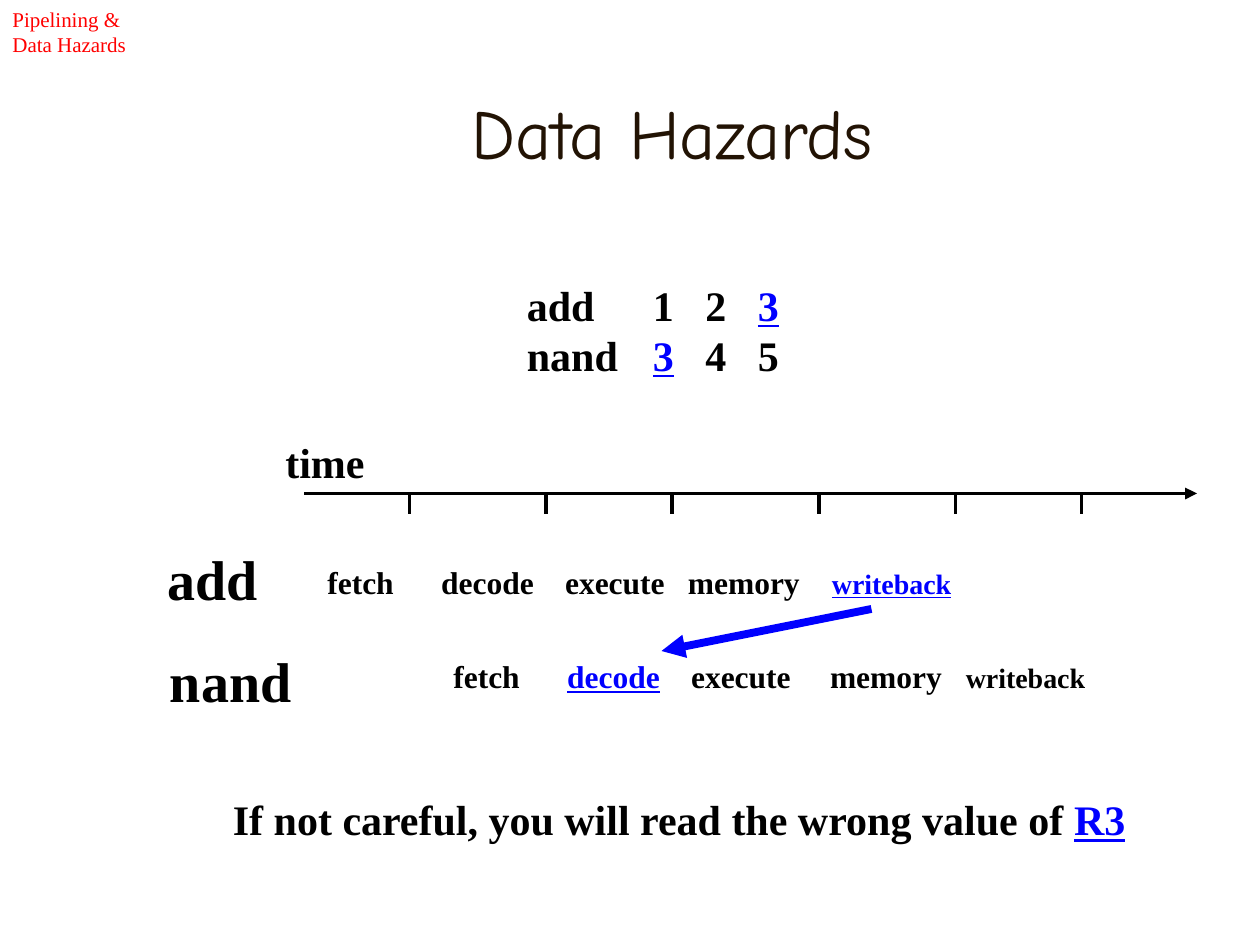
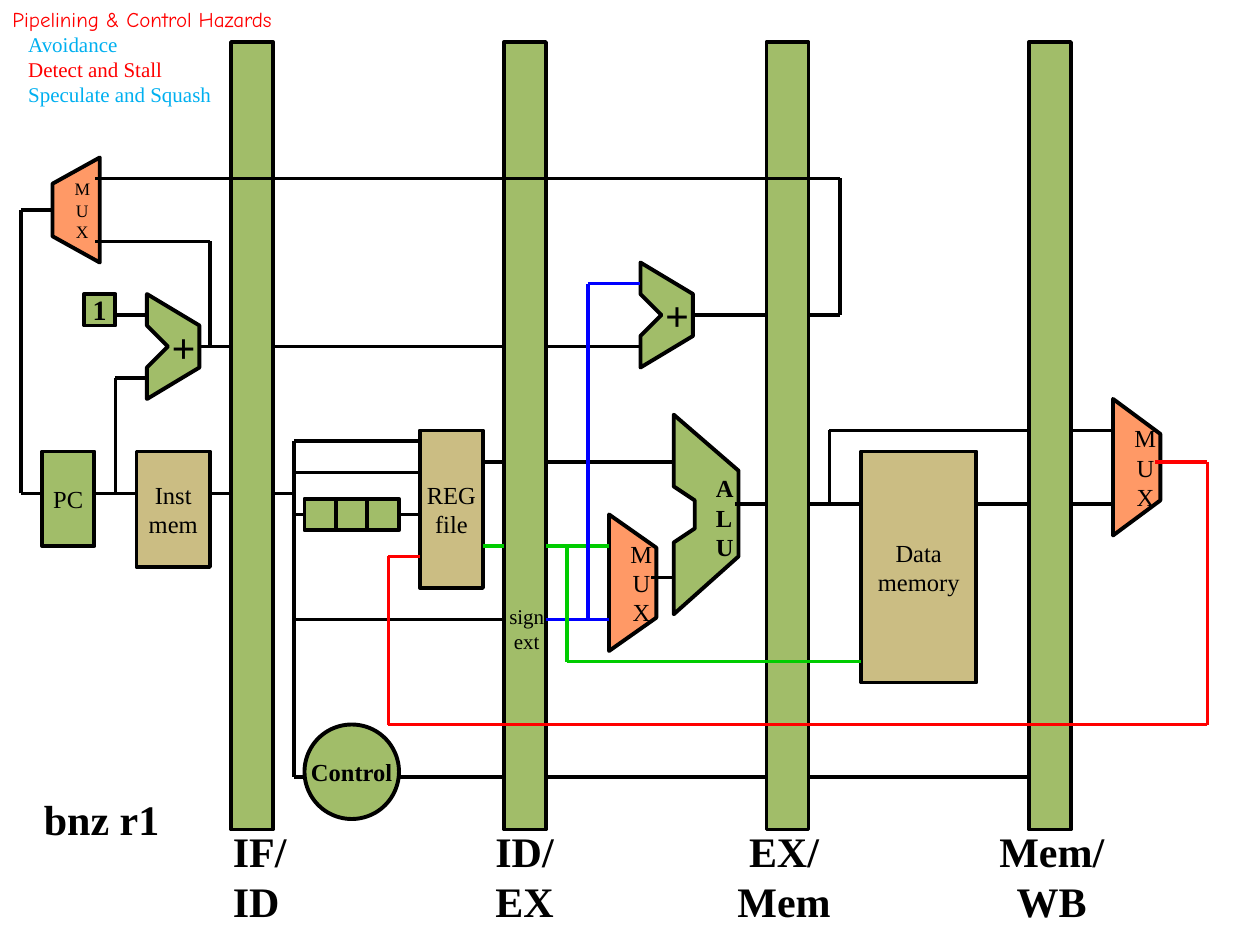
from pptx import Presentation
from pptx.dml.color import RGBColor
from pptx.enum import shapes as sh, text as tx
from pptx.oxml import ns, xmlchemy as xc
from pptx.util import Pt

BLACK = RGBColor(0, 0, 0)
BLUE = RGBColor(0, 0, 255)
RED = RGBColor(255, 0, 0)
GREEN = RGBColor(0, 204, 0)
SKY = RGBColor(0, 176, 240)
BROWN = RGBColor(0x22, 0x13, 0x04)
MOSS = RGBColor(0xA1, 0xBD, 0x69)
SAND = RGBColor(0xCB, 0xBD, 0x83)
PEACH = RGBColor(0xFF, 0x99, 0x66)
SERIF, COMIC = "Times New Roman", "Comic Neue"
MID = tx.PP_ALIGN.CENTER
RECT, OVAL = sh.MSO_SHAPE.RECTANGLE, sh.MSO_SHAPE.OVAL


def write(shape, lines, size, bold=False, color=BLACK, align=None, stops=()):
    """Lines split at | into runs; a run that starts with _ is a hazard."""
    frame = shape.text_frame
    frame.word_wrap = bool(stops)
    for i, line in enumerate(lines.split("\n")):
        para = frame.paragraphs[0] if i == 0 else frame.add_paragraph()
        para.alignment = align
        if stops:
            tabs = xc.OxmlElement("a:tabLst")
            para._p.get_or_add_pPr().append(tabs)
            for stop in stops:
                tab = xc.OxmlElement("a:tab")
                tab.set("pos", str(Pt(stop)))
                tab.set("algn", "l")
                tabs.append(tab)
        for part in line.split("|"):
            hot = part.startswith("_")
            run = para.add_run()
            run.text = part.lstrip("_")
            look = {"name": SERIF, "size": Pt(size), "bold": bold, "underline": hot}
            for key, val in look.items():
                setattr(run.font, key, val)
            run.font.color.rgb = BLUE if hot else color
    return frame


def wire(slide, color, *dots, width=2.25, arrow=False):
    """Draw straight lines from dot to dot."""
    for start, end in zip(dots, dots[1:]):
        line = slide.shapes.add_connector(
            sh.MSO_CONNECTOR.STRAIGHT, *map(Pt, start + end))
        line.line.color.rgb = color
        line.line.width = Pt(width)
        line._element.spPr.append(xc.OxmlElement("a:effectLst"))
        if arrow:
            tip = xc.OxmlElement("a:tailEnd")
            tip.set("type", "triangle")
            line._element.spPr.find(ns.qn("a:ln")).append(tip)
    return line


deck = Presentation()
deck.slide_width, deck.slide_height = Pt(720), Pt(540)

# Slide 1: title
haz = deck.slides.add_slide(deck.slide_layouts[5])
title = haz.shapes.title
spot = {"left": 84, "top": 30, "width": 600, "height": 90}
for key, val in spot.items():
    setattr(title, key, Pt(val))
write(title, "Data Hazards", 40, color=BROWN, align=MID)
title.text_frame.word_wrap = True
title.text_frame.paragraphs[0].runs[0].font.name = COMIC

# Labels
labels = [
    (156, 246, 64, 36, "time", 24, True, BLACK),
    (88.5, 307.5, 70, 45, "add", 32, True, BLACK),
    (90, 366, 90, 45, "nand", 32, True, BLACK),
    (126, 450, 530, 36,
     "If not careful, you will read the wrong value of |_R3", 24, True, BLACK),
    (0, 0, 84, 36, "Pipelining &\nData Hazards", 12, False, RED),
]
for x, y, w, h, words, size, bold, color in labels:
    box = haz.shapes.add_textbox(*map(Pt, (x, y, w, h)))
    write(box, words, size, bold, color)

# Code and pipeline stages, set in columns by tab stops
code = haz.shapes.add_textbox(Pt(294), Pt(156), Pt(164), Pt(65))
write(code, "add\t1\t2\t|_3\nnand\t|_3|\t4\t5", 24, True, stops=(72, 102, 132))
rows = [
    (180, 318, "fetch\tdecode\texecute\tmemory\t|_writeback", (65, 135.8, 206, 288.3)),
    (252, 372, "fetch\t|_decode|\texecute\tmemory\t|writeback",
     (65, 135.8, 215.2, 292.8)),
]
for x, y, words, stops in rows:
    box = haz.shapes.add_textbox(Pt(x), Pt(y), Pt(384), Pt(29))
    frame = write(box, words, 18, True, stops=stops)
    frame.paragraphs[0].runs[-1].font.size = Pt(16)

# Time axis and hazard arrow
wire(haz, BLACK, (174, 282), (684, 282), arrow=True)
for x in (234, 312, 384, 468, 546, 618):
    wire(haz, BLACK, (x, 282), (x, 294))
wire(haz, BLUE, (498, 348), (378, 372), width=4.5, arrow=True)

# Slide 2: blocks of the datapath
path = deck.slides.add_slide(deck.slide_layouts[6])
bands = [(x, 24, 24, 450, RECT, MOSS, "", 14, False) for x in (132, 288, 438, 588)]
slots = [(174 + 18 * i, 285, 18, 18, RECT, MOSS, "", 14, False) for i in range(3)]
blocks = [
    (24, 258, 30, 54, RECT, MOSS, "PC", 14, False),
    (78, 258, 42, 66, RECT, SAND, "Inst\nmem", 14, False),
    (240, 246, 36, 90, RECT, SAND, "REG\nfile", 14, False),
    (492, 258, 66, 132, RECT, SAND, "Data\nmemory", 14, False),
    (48, 168, 18, 18, RECT, MOSS, "1", 16, True),
    (174, 414, 54, 54, OVAL, MOSS, "Control", 14, True),
]
drawn = []
for x, y, w, h, kind, fill, words, size, bold in bands + blocks + slots:
    block = path.shapes.add_shape(kind, *map(Pt, (x, y, w, h)))
    if words:
        write(block, words, size, bold, align=MID)
    drawn.append((block, fill))

# Muxes, adders and ALU
muxes = [
    ([(636, 306), (663, 286), (663, 248), (636, 228)], 14, 10),
    ([(348, 372), (375, 353), (375, 313), (348, 294)], 14, 10),
    ([(57, 150), (30, 135), (30, 105), (57, 90)], 10, 7),
]
adders = [(84, 168), (366, 150)]
notch = [(0, 0), (30, 18), (30, 42), (0, 60), (0, 42), (12, 30), (0, 18)]
alu = [(422, 269), (385, 237), (385, 278), (397, 286), (397, 302),
       (385, 310), (385, 351), (422, 318)]
forms = [(dots, PEACH, size, pad) for dots, size, pad in muxes]
forms += [([(x + a, y + b) for a, b in notch], MOSS, 0, 0) for x, y in adders]
forms.append((alu, MOSS, 0, 0))
for dots, fill, size, pad in forms:
    pen = path.shapes.build_freeform(*dots[0], scale=Pt(1))
    pen.add_line_segments(dots[1:], close=True)
    form = pen.convert_to_shape()
    if size:
        frame = write(form, "M\nU\nX", size, align=MID)
        frame.vertical_anchor = tx.MSO_ANCHOR.MIDDLE
        frame.margin_left, frame.margin_right = Pt(pad), 0
        frame.margin_top = frame.margin_bottom = 0
    drawn.append((form, fill))

for item, fill in drawn:
    item.shadow.inherit = False
    item.fill.solid()
    item.fill.fore_color.rgb = fill
    item.line.color.rgb = BLACK
    item.line.width = Pt(2.25)

# Wires
wires = [
    # fetch
    (BLACK, (120, 282), (132, 282)),
    (BLACK, (114, 198), (132, 198)),
    (BLACK, (120, 198), (120, 138), (54, 138)),
    (BLACK, (66, 180), (84, 180)),
    (BLACK, (54, 282), (78, 282)),
    (BLACK, (66, 282), (66, 216), (84, 216)),
    (BLACK, (24, 282), (12, 282), (12, 120), (30, 120)),
    # decode
    (BLACK, (156, 282), (168, 282)),
    (BLACK, (240, 252), (168, 252), (168, 444), (174, 444)),
    (BLACK, (168, 354), (288, 354)),
    (BLACK, (168, 270), (240, 270)),
    (GREEN, (276, 312), (288, 312)),
    (BLACK, (276, 264), (288, 264)),
    (BLACK, (156, 198), (288, 198)),
    # execute
    (GREEN, (312, 312), (348, 312)),
    (BLACK, (312, 264), (384, 264)),
    (BLACK, (312, 198), (366, 198)),
    (BLUE, (312, 354), (348, 354)),
    (BLUE, (336, 354), (336, 162), (366, 162)),
    (BLACK, (384, 330), (372, 330)),
    (BLACK, (420, 288), (438, 288)),
    (BLACK, (396, 180), (438, 180)),
    # memory
    (BLACK, (462, 288), (492, 288)),
    (BLACK, (474, 288), (474, 246), (588, 246)),
    (BLACK, (558, 288), (588, 288)),
    (GREEN, (324, 312), (324, 378), (492, 378)),
    (BLACK, (462, 180), (480, 180), (480, 102), (54, 102)),
    # write back
    (BLACK, (612, 288), (636, 288)),
    (BLACK, (612, 246), (636, 246)),
    (RED, (660, 264), (690, 264), (690, 414), (222, 414), (222, 318), (240, 318)),
    # control
    (BLACK, (228, 444), (288, 444)),
    (BLACK, (312, 444), (438, 444)),
    (BLACK, (462, 444), (588, 444)),
]
for color, *dots in wires:
    wire(path, color, *dots)

# Wires joined to the outer instruction slots
first = len(bands + blocks)
joins = [((174, 294), (168, 294), first, 1), ((228, 294), (240, 294), first + 2, 3)]
for start, end, slot, side in joins:
    wire(path, BLACK, start, end).begin_connect(drawn[slot][0], side)

# Stage names and other labels
names = [
    (126, 468, 50, 65, "IF/\nID", 24, True, None),
    (276, 468, 52, 65, "ID/\nEX", 24, True, None),
    (410, 468, 76, 65, "EX/\nMem", 24, True, MID),
    (556, 468, 90, 65, "Mem/\nWB", 24, True, MID),
    (281, 341.5, 40, 36, "sign\next", 12, False, MID),
    (402, 267, 28, 57.5, "A\nL\nU", 14, True, None),
    (18, 450, 84, 36, "bnz r1", 24, True, None),
]
names += [(x + 7, y + 12, 30, 36, "+", 24, True, None) for x, y in adders]
for x, y, w, h, words, size, bold, align in names:
    box = path.shapes.add_textbox(*map(Pt, (x, y, w, h)))
    write(box, words, size, bold, align=align)

# Topic list
box = path.shapes.add_textbox(0, 0, Pt(192), Pt(67.5))
topics = "Pipelining & Control Hazards\nAvoidance\nDetect and Stall\nSpeculate and Squash"
frame = write(box, topics, 12, color=RED)
frame.word_wrap = True
head, *items = frame.paragraphs
head.runs[0].font.name = COMIC
for item, color in zip(items, (SKY, RED, SKY)):
    item.level = 1
    item._p.get_or_add_pPr().set("marL", str(Pt(9)))
    item.runs[0].font.color.rgb = color

deck.save("out.pptx")
